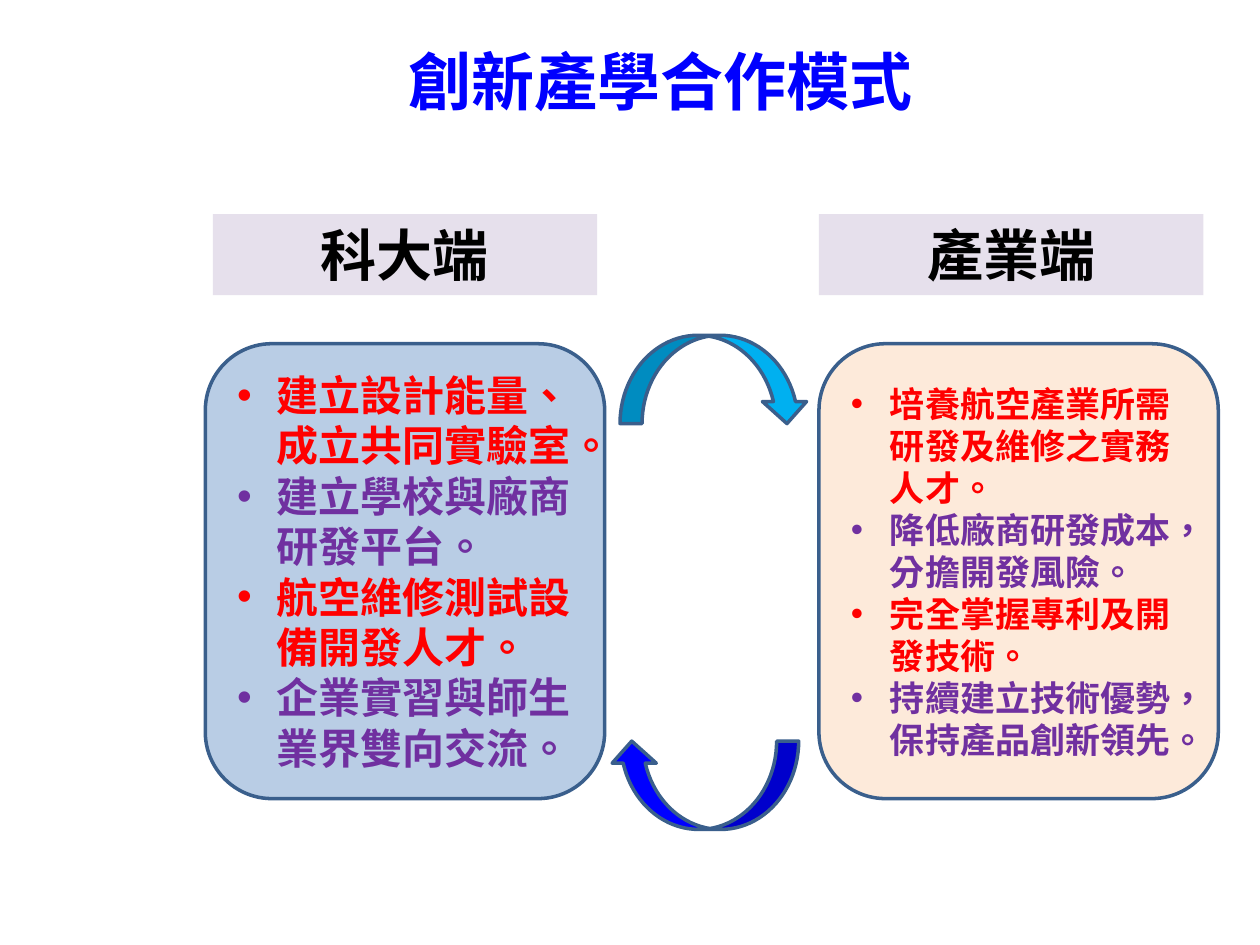
from lxml.etree import SubElement
from pptx import Presentation
from pptx.dml.color import RGBColor
from pptx.enum.lang import MSO_LANGUAGE_ID
from pptx.enum.shapes import MSO_SHAPE
from pptx.enum.text import MSO_ANCHOR, PP_ALIGN
from pptx.oxml.ns import qn
from pptx.util import Cm, Pt

HEADER_SIZE = (7.75, 1.63)
PANEL_SIZE = (8.05, 9.17)
ARROW_SIZE = (3.81, 1.78)
PANEL_DROP = 2.61
OUTLINE = "3A5F8C"
RED, PURPLE = "FF0000", "7030A0"

SCHOOL_POINTS = [
    "建立設計能量、成立共同實驗室。",
    "建立學校與廠商研發平台。",
    "航空維修測試設備開發人才。",
    "企業實習與師生業界雙向交流。",
]
INDUSTRY_POINTS = [
    "培養航空產業所需研發及維修之實務人才。",
    "降低廠商研發成本，分擔開發風險。",
    "完全掌握專利及開發技術。",
    "持續建立技術優勢，保持產品創新領先。",
]


def colour(value):
    """Turn a hex string into a colour."""
    return RGBColor.from_string(value)


def add_block(page, kind, box, fill, outline=None):
    """Add a filled preset shape in a box given in centimetres."""
    shape = page.shapes.add_shape(kind, *map(Cm, box))
    shape.shadow.inherit = False
    shape.fill.solid()
    shape.fill.fore_color.rgb = colour(fill)
    if outline:
        shape.line.color.rgb = colour(outline)
        shape.line.width = Pt(2)
    else:
        shape.line.fill.background()
    return shape


def style_para(para, size, ink, align, face="Calibri"):
    """Format a paragraph and its spans in bold Traditional Chinese."""
    para.alignment = align
    for span in para.runs:
        span.font.name = face
        span.font.size = Pt(size)
        span.font.bold = True
        span.font.color.rgb = colour(ink)
        span.font.language_id = MSO_LANGUAGE_ID.TRADITIONAL_CHINESE


def add_bullet(para):
    """Give a paragraph a round bullet with a hanging indent."""
    properties = para._p.get_or_add_pPr()
    properties.set("marL", str(Cm(0.79)))
    properties.set("indent", str(-Cm(0.79)))
    SubElement(properties, qn("a:buFont"), typeface="Arial")
    SubElement(properties, qn("a:buChar"), char="•")


def add_title(page, box, text):
    """Place the centred slide title."""
    frame = page.shapes.add_textbox(*map(Cm, box)).text_frame
    frame.word_wrap = True
    frame.text = text
    face = "Noto Sans CJK SC"
    style_para(frame.paragraphs[0], 36, "0000FF", PP_ALIGN.CENTER, face)
    for span in frame.paragraphs[0].runs:
        SubElement(span.font._element, qn("a:ea"), typeface=face)


def add_column(page, left, top, heading, points, size, fill, header_shift=0):
    """Place a heading with its rounded panel of bullet points below."""
    panel = add_block(page, MSO_SHAPE.ROUNDED_RECTANGLE,
                      (left, top + PANEL_DROP, *PANEL_SIZE), fill, OUTLINE)
    frame = panel.text_frame
    frame.vertical_anchor = MSO_ANCHOR.MIDDLE
    frame.text = "\n".join(points)
    for index, para in enumerate(frame.paragraphs):
        add_bullet(para)
        style_para(para, size, (RED, PURPLE)[index % 2], PP_ALIGN.LEFT)

    header = add_block(page, MSO_SHAPE.RECTANGLE,
                       (left + header_shift, top, *HEADER_SIZE), "E6E0EC")
    header.text_frame.vertical_anchor = MSO_ANCHOR.TOP
    header.text_frame.text = heading
    style_para(header.text_frame.paragraphs[0], 32, "000000", PP_ALIGN.CENTER)


def add_cycle(page, left, top):
    """Place the two curved arrows that link the columns."""
    arrow = MSO_SHAPE.CURVED_DOWN_ARROW
    add_block(page, arrow, (left + 0.21, top, *ARROW_SIZE), "00B0F0", OUTLINE)
    back = add_block(page, arrow, (left, top + 8.18, *ARROW_SIZE),
                     "0000FF", OUTLINE)
    back.rotation = 180


def main():
    """Build the slide and save it."""
    deck = Presentation()
    deck.slide_width, deck.slide_height = Cm(25.4), Cm(19.05)
    page = deck.slides.add_slide(deck.slide_layouts[6])
    add_title(page, (2.11, 0.74, 22.43, 3.18), "創新產學合作模式")
    add_column(page, 4.14, 4.32, "科大端", SCHOOL_POINTS, 24, "B9CDE5", 0.15)
    add_column(page, 16.51, 4.32, "產業端", INDUSTRY_POINTS, 20, "FDEADA")
    add_cycle(page, 12.29, 6.76)
    deck.save("out.pptx")


if __name__ == "__main__":
    main()
